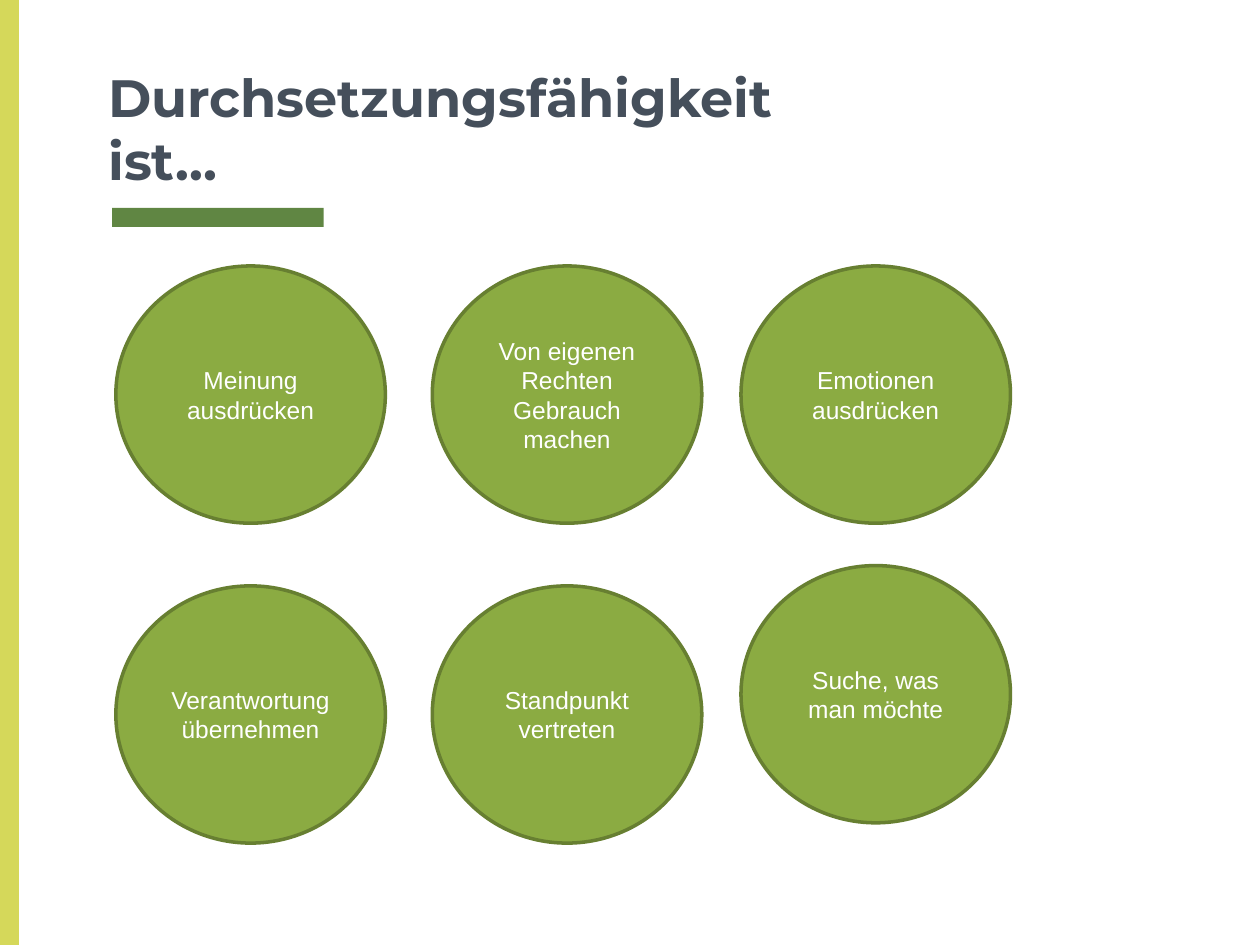
from dataclasses import dataclass

from pptx import Presentation
from pptx.dml.color import RGBColor
from pptx.enum.shapes import MSO_SHAPE as Preset
from pptx.enum.text import MSO_ANCHOR as Anchor, MSO_AUTO_SIZE as AutoSize, PP_ALIGN as Align
from pptx.shapes.autoshape import Shape
from pptx.slide import Slide
from pptx.util import Pt


@dataclass(frozen=True)
class Theme:
    title_color: str = "454F5B"
    stripe: str = "D5D85A"
    underline: str = "608643"
    circle_fill: str = "8BAB42"
    circle_line: str = "677F31"
    circle_text: str = "FFFFFF"
    title_font: str = "Montserrat"
    body_font: str = "Arial"
    title_size: float = 30
    body_size: float = 14
    line_width: float = 2


@dataclass(frozen=True)
class Box:
    left: float
    top: float
    width: float
    height: float


@dataclass(frozen=True)
class Circle:
    text: str
    left: float
    top: float


THEME = Theme()
SLIDE_WIDTH, SLIDE_HEIGHT = 720, 540
CIRCLE_WIDTH, CIRCLE_HEIGHT = 154, 147
LEFT, CENTER, RIGHT = 66.2, 247, 423.4
UPPER, LOWER, LOWER_RIGHT = 152, 334.8, 323.2
CIRCLES = (
    Circle("Meinung ausdrücken", LEFT, UPPER),
    Circle("Von eigenen Rechten Gebrauch machen", CENTER, UPPER),
    Circle("Emotionen ausdrücken", RIGHT, UPPER),
    Circle("Verantwortung übernehmen", LEFT, LOWER),
    Circle("Standpunkt vertreten", CENTER, LOWER),
    Circle("Suche, was man möchte", RIGHT, LOWER_RIGHT),
)


def set_text(shape: Shape, text: str, *, font: str, size: float, color: str,
             bold: bool = False, align: Align = Align.CENTER,
             anchor: Anchor = Anchor.MIDDLE, inset_y: float = 3.6) -> None:
    """Write formatted text into a shape."""
    frame = shape.text_frame
    frame.text = text
    frame.word_wrap = True
    frame.auto_size = AutoSize.NONE
    frame.vertical_anchor = anchor
    frame.margin_left = frame.margin_right = Pt(7.2)
    frame.margin_top = frame.margin_bottom = Pt(inset_y)
    paragraph = frame.paragraphs[0]
    paragraph.alignment = align
    run_font = paragraph.runs[0].font
    run_font.name, run_font.size, run_font.bold = font, Pt(size), bold
    run_font.color.rgb = RGBColor.from_string(color)


def add_shape(slide: Slide, preset: Preset, box: Box, fill: str,
              line: str | None = None) -> Shape:
    """Add a filled preset shape with an optional outline."""
    shape = slide.shapes.add_shape(
        preset, Pt(box.left), Pt(box.top), Pt(box.width), Pt(box.height))
    shape.shadow.inherit = False
    shape.fill.solid()
    shape.fill.fore_color.rgb = RGBColor.from_string(fill)
    if line is None:
        shape.line.fill.background()
    else:
        shape.line.color.rgb = RGBColor.from_string(line)
        shape.line.width = Pt(THEME.line_width)
    return shape


def add_title(slide: Slide, text: str, box: Box) -> None:
    """Place and format the title placeholder."""
    title = slide.shapes.title
    title.left, title.top = Pt(box.left), Pt(box.top)
    title.width, title.height = Pt(box.width), Pt(box.height)
    set_text(title, text, font=THEME.title_font, size=THEME.title_size,
             color=THEME.title_color, bold=True, align=Align.LEFT,
             anchor=Anchor.BOTTOM, inset_y=7.2)


def add_circle(slide: Slide, circle: Circle) -> None:
    """Draw one labelled circle."""
    box = Box(circle.left, circle.top, CIRCLE_WIDTH, CIRCLE_HEIGHT)
    shape = add_shape(slide, Preset.OVAL, box, THEME.circle_fill, THEME.circle_line)
    set_text(shape, circle.text, font=THEME.body_font, size=THEME.body_size,
             color=THEME.circle_text)


def main() -> None:
    """Build and save the presentation."""
    presentation = Presentation()
    presentation.slide_width, presentation.slide_height = Pt(SLIDE_WIDTH), Pt(SLIDE_HEIGHT)
    slide = presentation.slides.add_slide(presentation.slide_layouts.get_by_name("Title Only"))
    add_shape(slide, Preset.RECTANGLE, Box(64, 118.8, 121, 10.8), THEME.underline)
    add_shape(slide, Preset.RECTANGLE, Box(0, 0, 10.8, SLIDE_HEIGHT), THEME.stripe)
    add_title(slide, "Durchsetzungsfähigkeit ist…", Box(54.7, 19.4, 458, 97.2))
    for circle in CIRCLES:
        add_circle(slide, circle)
    presentation.save("out.pptx")


if __name__ == "__main__":
    main()
